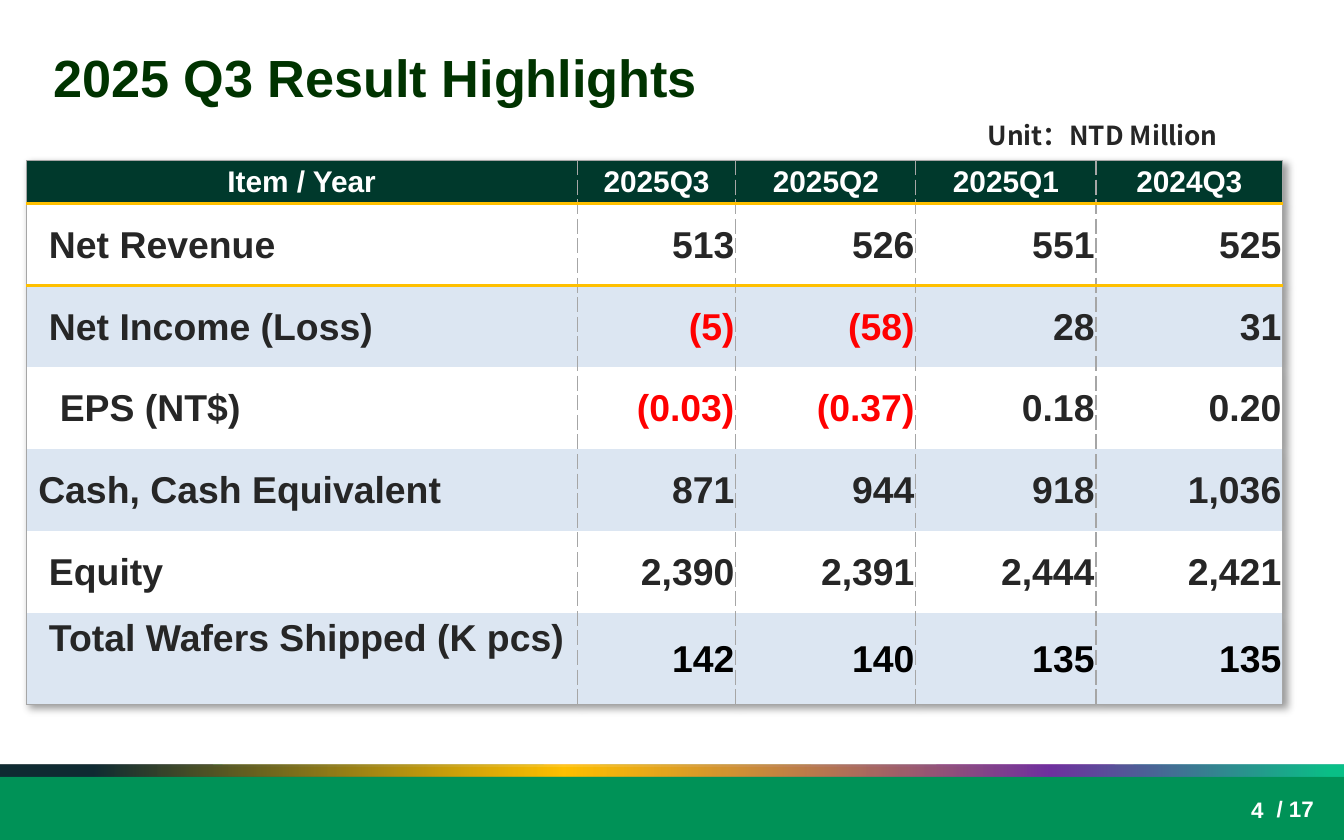
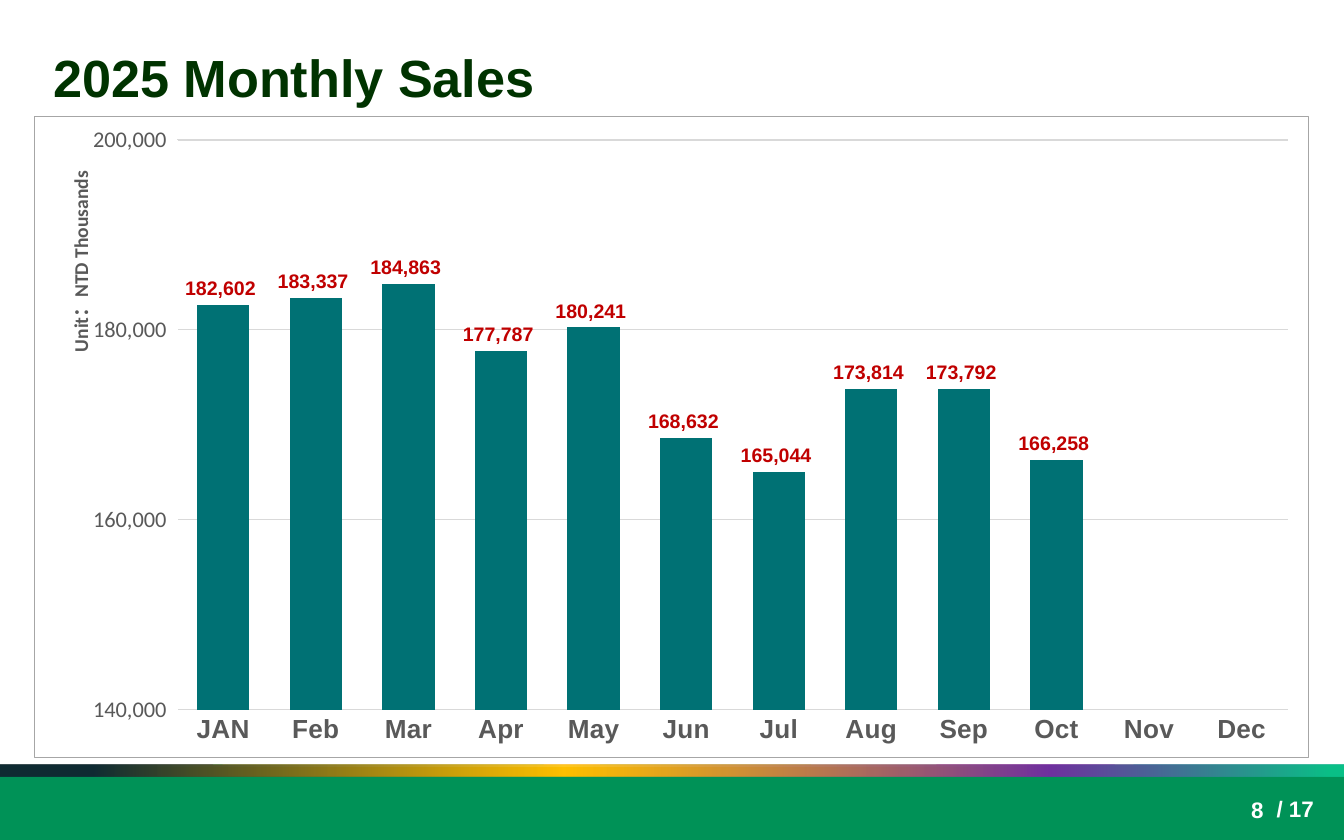
from dataclasses import dataclass
from typing import NamedTuple

from pptx import Presentation, util as u
from pptx.chart import data
from pptx.dml import color
from pptx.enum import chart as kinds, shapes, text
from pptx.oxml import ns, parse_xml as xml

WIDE, TALL = u.Inches(10), u.Inches(6.25)
ALIGN = text.PP_ALIGN
ANCHOR = text.MSO_ANCHOR
MONEY = r"#,##0_);[Red]\(#,##0\)"
NO_STYLE = "{2D5ABB26-0587-4C30-8999-92F81FD0307C}"


# Theme: colours, fonts and type sizes
@dataclass(frozen=True)
class Theme:
    sans: str = "Arial"
    soft: str = "Calibri"
    asian: str = "Noto Sans CJK TC"
    title: str = "003300"
    ink: str = "262626"
    black: str = "000000"
    white: str = "FFFFFF"
    loss: str = "FF0000"
    head: str = "00392C"
    stripe: str = "DCE6F2"
    green: str = "009257"
    gold: str = "FFC000"
    edge: str = "A6A6A6"
    grid: str = "D9D9D9"
    gray: str = "595959"
    bar: str = "007174"
    label: str = "C00000"
    title_size: float = 28
    cell_size: float = 20
    head_size: float = 16
    unit_size: float = 14
    axis_size: float = 12
    foot_size: float = 12
    label_size: float = 10.5


T = Theme()


# Lengths are percentages of the slide's width and height
class Box(NamedTuple):
    left: float
    top: float
    wide: float
    tall: float

    def emu(self) -> tuple[int, int, int, int]:
        return (across(self.left), down(self.top),
                across(self.wide), down(self.tall))


class Type(NamedTuple):
    size: float
    hue: str
    face: str = T.sans
    bold: bool = True


class Edge(NamedTuple):
    hue: str
    points: float
    dash: str = "solid"


class Row(NamedTuple):
    label: str
    indent: int
    cells: tuple[str, ...]


class Stop(NamedTuple):
    spot: int
    hue: str
    alpha: int = 100


def across(share: float) -> int:
    return round(WIDE * share / 100)


def down(share: float) -> int:
    return round(TALL * share / 100)


def rgb(hue: str) -> color.RGBColor:
    return color.RGBColor.from_string(hue)


# Text helpers
def style(font, kind: Type) -> None:
    font.name, font.size, font.bold = kind.face, u.Pt(kind.size), kind.bold
    font.color.rgb = rgb(kind.hue)


def write(frame, words: str, kind: Type, align=ALIGN.LEFT):
    para = frame.paragraphs[0]
    para.alignment = align
    run = para.add_run()
    run.text = words
    style(run.font, kind)
    return run


def add_text(slide, box: Box, words: str, kind: Type,
             align=ALIGN.LEFT, anchor=ANCHOR.TOP, wrap: bool = True):
    frame = slide.shapes.add_textbox(*box.emu()).text_frame
    frame.word_wrap = wrap
    frame.vertical_anchor = anchor
    return write(frame, words, kind, align)


def add_asian(run, face: str) -> None:
    props = run.font._element
    mark = xml(f'<a:ea {ns.nsdecls("a")} typeface="{face}"/>')
    props.find(ns.qn("a:latin")).addnext(mark)


# Shared slide parts
STOPS = (Stop(7, "102C34"), Stop(42, T.gold, 87),
         Stop(78, "7030A0"), Stop(99, "0AC088"))


def add_band(slide, box: Box, hue: str):
    band = slide.shapes.add_shape(shapes.MSO_SHAPE.RECTANGLE, *box.emu())
    band.shadow.inherit = False
    band.fill.solid()
    band.fill.fore_color.rgb = rgb(hue)
    band.line.color.rgb = rgb(hue)
    band.line.width = u.Pt(2)
    return band


def add_blend(slide, box: Box, stops: tuple[Stop, ...]) -> None:
    band = add_band(slide, box, T.gold)
    band.line.fill.background()
    band.fill.gradient()
    band.fill.gradient_angle = 0
    ramp = band.element.spPr.find(".//" + ns.qn("a:gsLst"))
    for old in list(ramp):
        ramp.remove(old)
    for stop in stops:
        ramp.append(xml(
            f'<a:gs {ns.nsdecls("a")} pos="{stop.spot * 1000}">'
            f'<a:srgbClr val="{stop.hue}"><a:alpha val="{stop.alpha * 1000}"/>'
            f'</a:srgbClr></a:gs>'))


def add_page(deck, title: str, page: int):
    slide = deck.slides.add_slide(deck.slide_layouts[5])
    add_band(slide, Box(0, 92.32, 100, 7.52), T.green)
    add_band(slide, Box(0, 91.52, 100, 0.64), T.gold)
    add_blend(slide, Box(0, 91.04, 100, 1.44), STOPS)
    foot = Type(T.foot_size, T.white)
    add_text(slide, Box(94, 93.92, 4.8, 4.8), "/ 17", foot, wrap=False)
    add_text(slide, Box(71.7, 93.76, 23.3, 5.28), str(page), foot,
             ALIGN.RIGHT, ANCHOR.MIDDLE)
    head = slide.shapes.title
    head.left, head.top, head.width, head.height = Box(2.95, 4.64, 90, 9.12).emu()
    frame = head.text_frame
    frame.auto_size = text.MSO_AUTO_SIZE.NONE
    frame.vertical_anchor = ANCHOR.TOP
    write(frame, title, Type(T.title_size, T.title))
    return slide


# Results table
HEADS = ("Item / Year", "2025Q3", "2025Q2", "2025Q1", "2024Q3")
ROWS = (
    Row("Net Revenue", 2, ("513", "526", "551", "525")),
    Row("Net Income (Loss)", 2, ("(5)", "(58)", "28", "31")),
    Row("EPS (NT$)", 3, ("(0.03)", "(0.37)", "0.18", "0.20")),
    Row("Cash, Cash Equivalent", 1, ("871", "944", "918", "1,036")),
    Row("Equity", 2, ("2,390", "2,391", "2,444", "2,421")),
    Row("Total Wafers Shipped (K pcs)", 2, ("142", "140", "135", "135")),
)
COLS = (41, 11.8, 13.4, 13.4, 13.9)
TALLS = (5.12,) + (9.76,) * 5 + (10.88,)
INDENT = 0.08
DASH = Edge(T.edge, 0.75, "sysDash")
FRAME = Edge(T.edge, 0.5)
RULE = Edge(T.gold, 2.25)


def set_edges(cell, edges: dict[str, Edge]) -> None:
    props = cell._tc.get_or_add_tcPr()
    for spot, (side, edge) in enumerate(edges.items()):
        props.insert(spot, xml(
            f'<a:ln{side} {ns.nsdecls("a")} w="{u.Pt(edge.points)}">'
            f'<a:solidFill><a:srgbClr val="{edge.hue}"/></a:solidFill>'
            f'<a:prstDash val="{edge.dash}"/></a:ln{side}>'))


def edges_at(row: int, col: int) -> dict[str, Edge]:
    edges = {"L": DASH if col else FRAME,
             "R": DASH if col < len(COLS) - 1 else FRAME}
    if row < 2:
        edges["T"] = RULE if row else FRAME
    if row in (0, len(ROWS)):
        edges["B"] = FRAME if row else RULE
    return edges


def fill_cell(cell, words: str, kind: Type, align, back: str) -> None:
    cell.margin_left = cell.margin_top = cell.margin_right = u.Inches(0.01)
    cell.margin_bottom = 0
    cell.vertical_anchor = ANCHOR.MIDDLE
    cell.fill.solid()
    cell.fill.fore_color.rgb = rgb(back)
    write(cell.text_frame, words, kind, align)


def add_results(slide) -> None:
    box = Box(1.95, 19.1, sum(COLS), sum(TALLS))
    grid = slide.shapes.add_table(len(TALLS), len(COLS), *box.emu()).table
    props = grid._tbl.tblPr
    props.find(ns.qn("a:tableStyleId")).text = NO_STYLE
    props.insert(0, xml(
        f'<a:effectLst {ns.nsdecls("a")}><a:outerShdw blurRad="50800" '
        'dist="38100" dir="2700000" algn="tl" rotWithShape="0">'
        '<a:srgbClr val="000000"><a:alpha val="40000"/></a:srgbClr>'
        '</a:outerShdw></a:effectLst>'))
    for col, share in zip(grid.columns, COLS):
        col.width = across(share)
    for row, share in zip(grid.rows, TALLS):
        row.height = down(share)

    for col, words in enumerate(HEADS):
        fill_cell(grid.cell(0, col), words, Type(T.head_size, T.white),
                  ALIGN.CENTER, T.head)
    for num, row in enumerate(ROWS, 1):
        back = T.white if num % 2 else T.stripe
        plain = T.black if num == len(ROWS) else T.ink
        first = grid.cell(num, 0)
        fill_cell(first, row.label, Type(T.cell_size, T.ink), ALIGN.LEFT, back)
        first.margin_left = u.Inches(0.01 + INDENT * row.indent)
        for col, words in enumerate(row.cells, 1):
            hue = T.loss if words.startswith("(") else plain
            fill_cell(grid.cell(num, col), words, Type(T.cell_size, hue),
                      ALIGN.RIGHT, back)
    last = grid.cell(len(ROWS), 0)
    last.vertical_anchor = ANCHOR.TOP
    last.margin_top = u.Inches(0.03)
    for row in range(len(TALLS)):
        for col in range(len(COLS)):
            set_edges(grid.cell(row, col), edges_at(row, col))


# Sales chart
MONTHS = "JAN Feb Mar Apr May Jun Jul Aug Sep Oct Nov Dec".split()
SALES = (182602, 183337, 184863, 177787, 180241, 168632,
         165044, 173814, 173792, 166258, None, None)


def place(part, spot: int, **shares: float) -> None:
    for old in part.findall(ns.qn("c:layout")):
        part.remove(old)
    modes = "".join(f'<c:{key}Mode val="edge"/>' for key in "xy")
    sizes = "".join(f'<c:{key} val="{val}"/>' for key, val in shares.items())
    inner = '<c:layoutTarget val="inner"/>' if "w" in shares else ""
    part.insert(spot, xml(
        f'<c:layout {ns.nsdecls("c")}><c:manualLayout>{inner}{modes}{sizes}'
        '</c:manualLayout></c:layout>'))


def set_line(line, hue: str) -> None:
    line.color.rgb = rgb(hue)
    line.width = u.Pt(0.75)


def add_sales(slide) -> None:
    feed = data.CategoryChartData()
    feed.categories = MONTHS
    feed.add_series("Series 1", SALES)
    chart = slide.shapes.add_chart(
        kinds.XL_CHART_TYPE.COLUMN_CLUSTERED,
        *Box(2.5, 13.76, 94.9, 76.48).emu(), feed).chart
    chart.has_legend = chart.has_title = False
    style(chart.font, Type(10, T.black, T.soft, False))
    body = chart._chartSpace.find(ns.qn("c:chart"))
    body.addnext(xml(
        f'<c:spPr {ns.nsdecls("c", "a")}><a:solidFill><a:srgbClr val="{T.white}"/>'
        f'</a:solidFill><a:ln w="{u.Pt(0.75)}"><a:solidFill>'
        f'<a:srgbClr val="{T.edge}"/></a:solidFill></a:ln></c:spPr>'))
    place(body.find(ns.qn("c:plotArea")), 0, x=0.112, y=0.037, w=0.872, h=0.889)

    # Axes
    months, money = chart.category_axis, chart.value_axis
    for axis, kind, hue in (
            (months, Type(T.unit_size, T.gray), T.grid),
            (money, Type(T.axis_size, T.gray, T.soft, False), T.white)):
        axis.major_tick_mark = axis.minor_tick_mark = kinds.XL_TICK_MARK.NONE
        style(axis.tick_labels.font, kind)
        set_line(axis.format.line, hue)
    money.minimum_scale, money.maximum_scale = 140000, 200000
    money.major_unit = 20000
    money.tick_labels.number_format = MONEY
    money.tick_labels.number_format_is_linked = False
    set_line(money.major_gridlines.format.line, T.grid)
    name = money.axis_title
    write(name.text_frame, "Unit：NTD Thousands",
          Type(T.label_size, T.gray, T.soft), ALIGN.CENTER)
    turn = name._element.find(".//" + ns.qn("a:bodyPr"))
    turn.set("rot", "-5400000")
    turn.set("vert", "horz")
    place(name._element, 1, x=0.02, y=0.08)

    # Columns and their labels
    plot = chart.plots[0]
    plot.gap_width = 77
    plot.vary_by_categories = False
    bars = plot.series[0].format.fill
    bars.solid()
    bars.fore_color.rgb = rgb(T.bar)
    plot.has_data_labels = True
    labels = plot.data_labels
    labels.show_value = True
    labels.position = kinds.XL_LABEL_POSITION.OUTSIDE_END
    labels.number_format = MONEY
    labels.number_format_is_linked = False
    style(labels.font, Type(T.label_size, T.label))


def main() -> None:
    deck = Presentation()
    deck.slide_width, deck.slide_height = WIDE, TALL

    slide = add_page(deck, "2025 Q3 Result Highlights", 4)
    add_results(slide)
    unit = add_text(slide, Box(72.5, 13.44, 23, 5.44), "Unit：NTD Million",
                    Type(T.unit_size, T.ink, T.asian))
    add_asian(unit, T.asian)

    add_sales(add_page(deck, "2025 Monthly Sales", 8))
    deck.save("out.pptx")


if __name__ == "__main__":
    main()
